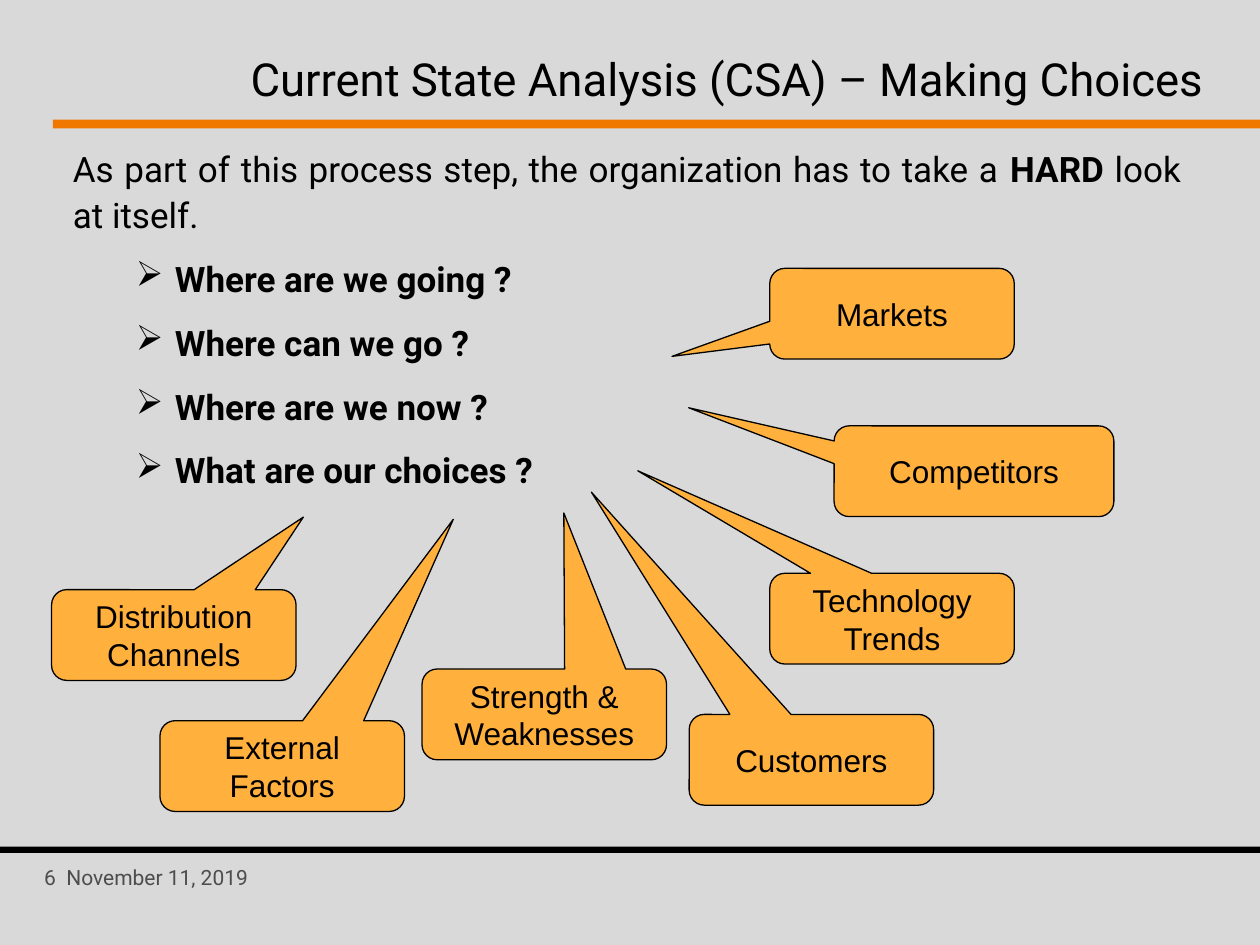
from lxml import etree
from pptx import Presentation
from pptx.dml.color import RGBColor
from pptx.enum.shapes import MSO_SHAPE as SHAPE
from pptx.enum.text import MSO_ANCHOR as ANCHOR, PP_ALIGN as ALIGN
from pptx.oxml.ns import qn
from pptx.util import Inches, Pt

BLACK, ORANGE, AMBER, GRAY = "000000", "F07800", "FFB03D", "4D4D4D"
QUESTIONS = [
    "Where are we going ?",
    "Where can we go ?",
    "Where are we now ?",
    "What are our choices ?",
]
CALLOUTS = [
    ("Markets", 6.11, 2.13, 1.94, (-0.9, 0.47)),
    ("Competitors", 6.62, 3.38, 2.22, (-1.02, -0.7)),
    ("Technology Trends", 6.11, 4.55, 1.94, (-1.04, -1.63)),
    ("Customers", 5.47, 5.67, 1.94, (-0.9, -2.95)),
    ("Strength & Weaknesses", 3.35, 5.31, 1.94, (0.08, -2.22)),
    ("Distribution Channels", 0.41, 4.68, 1.94, (0.53, -1.3)),
    ("External Factors", 1.27, 5.72, 1.94, (0.7, -2.72)),
]


def paint(fill, color):
    """Give a fill one solid colour."""
    fill.solid()
    fill.fore_color.rgb = RGBColor.from_string(color)


def add_run(p, text, size, font="Roboto", color=BLACK, bold=False):
    """Append a formatted run to a paragraph."""
    r = p.add_run()
    r.text = text
    r.font.name, r.font.size, r.font.bold = font, Pt(size), bold
    r.font.color.rgb = RGBColor.from_string(color)


def add_text_box(s, x, y, w, h, anchor=ANCHOR.TOP, wrap=True):
    """Add an empty text box and return its text frame."""
    tf = s.shapes.add_textbox(Inches(x), Inches(y), Inches(w), Inches(h)).text_frame
    tf.word_wrap, tf.vertical_anchor = wrap, anchor
    return tf


def add_bar(s, x, y, w, h, color):
    """Add a plain horizontal bar."""
    sp = s.shapes.add_shape(SHAPE.RECTANGLE, Inches(x), Inches(y), Inches(w), Inches(h))
    sp.shadow.inherit = False
    paint(sp.fill, color)
    sp.line.fill.background()


def add_callout(s, text, x, y, w, tail):
    """Add a rounded callout whose tail offset is relative to its size."""
    sp = s.shapes.add_shape(SHAPE.ROUNDED_RECTANGULAR_CALLOUT,
                            Inches(x), Inches(y), Inches(w), Inches(0.72))
    sp.shadow.inherit = False
    sp.adjustments[0], sp.adjustments[1] = tail
    paint(sp.fill, AMBER)
    paint(sp.line.fill, BLACK)
    sp.line.width = Pt(0.75)
    tf = sp.text_frame
    tf.word_wrap, tf.vertical_anchor = True, ANCHOR.MIDDLE
    p = tf.paragraphs[0]
    p.alignment = ALIGN.CENTER
    add_run(p, text, 18, "Arial")


def add_bullet(p):
    """Give a paragraph a hanging black arrow bullet."""
    pPr = p._p.get_or_add_pPr()
    pPr.set("marL", str(Inches(0.81)))
    pPr.set("indent", str(Inches(-0.31)))
    color = etree.SubElement(pPr, qn("a:buClr"))
    etree.SubElement(color, qn("a:srgbClr"), val=BLACK)
    etree.SubElement(pPr, qn("a:buChar"), char="➢")


def add_body(s):
    """Add the introduction and the bulleted questions."""
    tf = add_text_box(s, 0.48, 1.09, 8.99, 2.49)
    intro = tf.paragraphs[0]
    add_run(intro, "As part of this process step, the organization has to take a ", 20)
    add_run(intro, "HARD", 20, bold=True)
    add_run(intro, " look at itself.", 20)
    for question in QUESTIONS:
        p = tf.add_paragraph()
        p.level = 1
        add_bullet(p)
        p.space_before = Pt(10)
        add_run(p, question, 20, bold=True)
    for p in tf.paragraphs:
        p.alignment, p.line_spacing = ALIGN.JUSTIFY, 1.1


def main():
    """Build and save the slide."""
    prs = Presentation()
    prs.slide_width, prs.slide_height = Inches(10), Inches(7.5)
    s = prs.slides.add_slide(prs.slide_layouts[6])
    paint(s.background.fill, "D9D9D9")

    footer = add_text_box(s, 0.19, 6.81, 1.94, 0.3, wrap=False).paragraphs[0]
    footer.alignment = ALIGN.CENTER
    add_run(footer, "6  November 11, 2019", 12, color=GRAY)
    add_bar(s, 0.42, 0.95, 9.58, 0.07, ORANGE)
    add_bar(s, 0, 6.72, 10, 0.05, BLACK)

    title = add_text_box(s, 1.35, 0.3, 8.31, 0.64, ANCHOR.MIDDLE).paragraphs[0]
    title.alignment = ALIGN.RIGHT
    add_run(title, "Current State Analysis (CSA) – Making Choices", 26)
    add_body(s)
    for callout in CALLOUTS:
        add_callout(s, *callout)
    prs.save("out.pptx")


if __name__ == "__main__":
    main()
